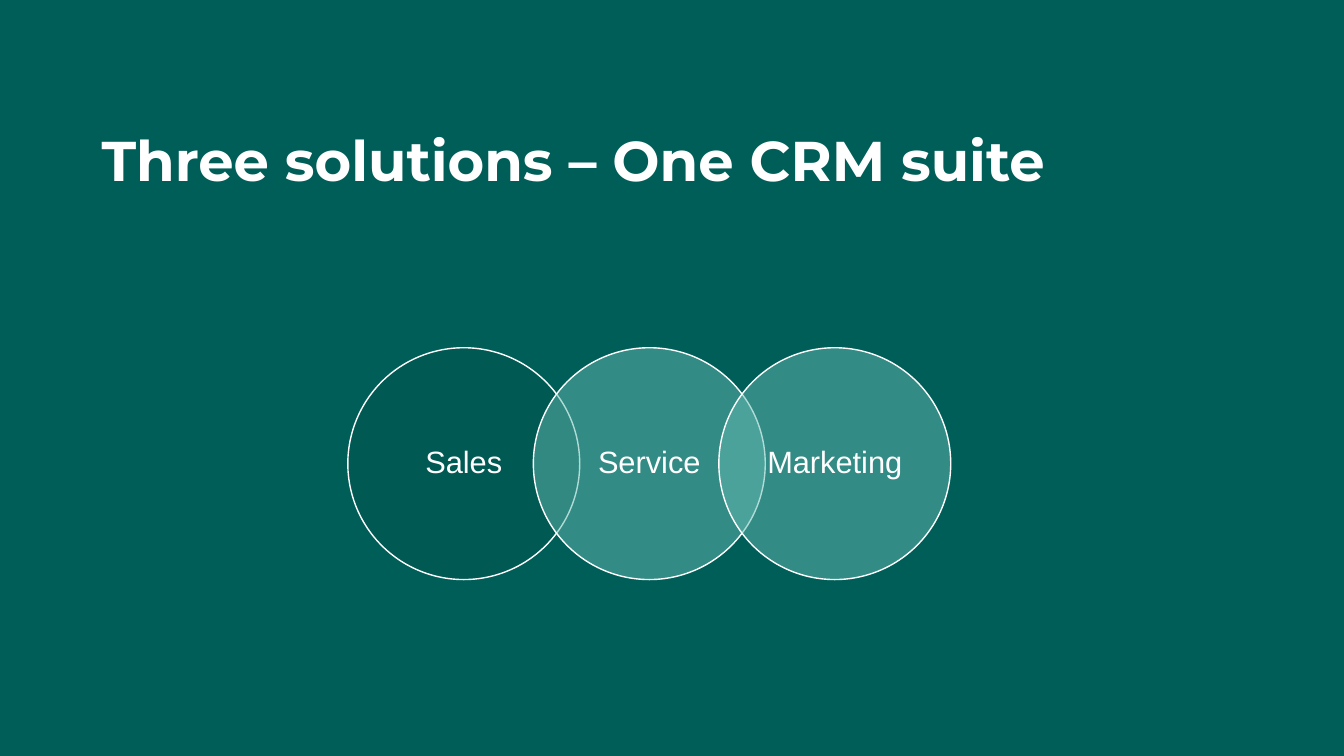
import pptx
import pptx.util
import pptx.dml.color
import pptx.enum.shapes
import pptx.enum.text
import pptx.oxml.ns
from lxml import etree

Inches, Pt = pptx.util.Inches, pptx.util.Pt
RGBColor = pptx.dml.color.RGBColor

# Content
WHITE = RGBColor(0xFF, 0xFF, 0xFF)
GREEN = RGBColor(0x00, 0x5E, 0x58)
DARK = RGBColor(0x00, 0x55, 0x50)
MINT = RGBColor(0x64, 0xB9, 0xB1)
TITLE = "Three solutions – One CRM suite"
RINGS = [("Sales", DARK), ("Service", MINT), ("Marketing", MINT)]

# Layout: each ring overlaps the one before by a fifth
LEFT, TOP, SIZE = 3.45, 3.45, 2.3
STEP = SIZE * 0.8


def write(frame, text, font, size, bold=False):
    frame.word_wrap = True
    para = frame.paragraphs[0]
    para.line_spacing = 0.9
    run = para.add_run()
    run.text = text
    run.font.name = font
    run.font.size = Pt(size)
    run.font.bold = bold
    run.font.color.rgb = WHITE
    return para


def fade(shape, part):
    # The first colour in the shape is its fill
    color = shape.element.find(".//" + pptx.oxml.ns.qn("a:srgbClr"))
    alpha = etree.SubElement(color, pptx.oxml.ns.qn("a:alpha"))
    alpha.set("val", str(part * 1000))


def add_ring(slide, index, label, color):
    ring = slide.shapes.add_shape(
        pptx.enum.shapes.MSO_SHAPE.OVAL, Inches(LEFT + index * STEP),
        Inches(TOP), Inches(SIZE), Inches(SIZE))
    ring.shadow.inherit = False
    ring.fill.solid()
    ring.fill.fore_color.rgb = color
    fade(ring, 50)
    ring.line.color.rgb = WHITE
    ring.line.width = Pt(1)
    frame = ring.text_frame
    frame.margin_left = frame.margin_right = Inches(0.13)
    frame.margin_top = frame.margin_bottom = Inches(0.03)
    frame.vertical_anchor = pptx.enum.text.MSO_ANCHOR.MIDDLE
    para = write(frame, label, "Arial", 22)
    para.alignment = pptx.enum.text.PP_ALIGN.CENTER


def main():
    deck = pptx.Presentation()
    deck.slide_width, deck.slide_height = Inches(13.33), Inches(7.5)
    slide = deck.slides.add_slide(deck.slide_layouts[6])
    slide.background.fill.solid()
    slide.background.fill.fore_color.rgb = GREEN

    # Title
    box = slide.shapes.add_textbox(
        Inches(0.91), Inches(1.27), Inches(11.5), Inches(2.03))
    write(box.text_frame, TITLE, "Montserrat", 40, True)

    # Overlapping rings
    for index, (label, color) in enumerate(RINGS):
        add_ring(slide, index, label, color)

    deck.save("out.pptx")


if __name__ == "__main__":
    main()
